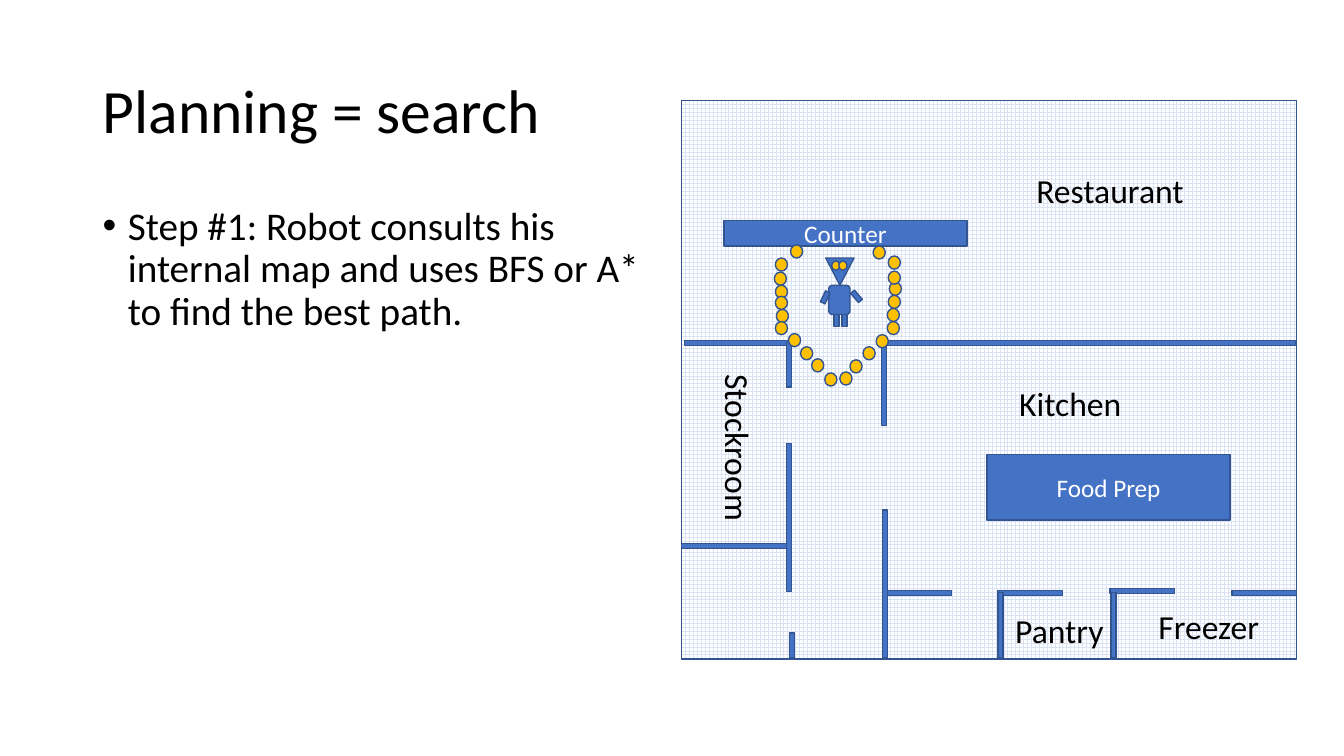
"""Build the slide on planning as search, with a restaurant floor plan and a robot."""
from lxml import etree
from pptx import Presentation
from pptx.dml.color import RGBColor
from pptx.enum.dml import MSO_PATTERN
from pptx.enum.shapes import MSO_SHAPE
from pptx.enum.text import MSO_ANCHOR, MSO_AUTO_SIZE, PP_ALIGN
from pptx.oxml.ns import qn
from pptx.util import Inches, Pt

RECTANGLE = MSO_SHAPE.RECTANGLE
ROUNDED = MSO_SHAPE.ROUNDED_RECTANGLE
TRIANGLE = MSO_SHAPE.ISOSCELES_TRIANGLE
OVAL = MSO_SHAPE.OVAL
LARGE_GRID = MSO_PATTERN.LARGE_GRID
TOP, MIDDLE = MSO_ANCHOR.TOP, MSO_ANCHOR.MIDDLE
CENTER = PP_ALIGN.CENTER
FIT_SHAPE = MSO_AUTO_SIZE.SHAPE_TO_FIT_TEXT

WALL = 0.05
LEVEL_WALLS = [(6.79, 3.38, 1.06), (8.73, 3.38, 4.12), (6.76, 5.39, 1.04),
               (8.8, 5.86, 0.64), (9.9, 5.86, 0.64), (11.01, 5.84, 0.64),
               (12.22, 5.86, 0.64)]
UPRIGHT_WALLS = [(8.74, 3.4, 0.82), (8.75, 5.06, 1.47), (9.9, 5.88, 0.65),
                 (11.02, 5.88, 0.65), (7.8, 4.4, 1.47), (7.8, 3.4, 0.44),
                 (7.83, 6.28, 0.25)]
ROOMS = [("Kitchen", 10.01, 3.75, 1.23, 0), ("Restaurant", 10.18, 1.64, 1.68, 0),
         ("Freezer", 11.39, 5.96, 1.21, 0), ("Pantry", 9.97, 6, 1.09, 0),
         ("Stockroom", 6.49, 4.2, 1.67, 90)]
ROBOT_LIMBS = [(8.27, 3.12, 0), (8.35, 3.12, 0), (8.47, 2.88, 319.4), (8.16, 2.89, 24.9)]
DOTS = [(7.69, 2.56), (7.68, 2.7), (7.69, 2.83), (7.69, 2.94), (7.7, 3.07), (7.69, 3.19),
        (8.05, 3.56), (8.43, 3.57), (8.8, 3.19), (8.8, 3.06), (8.81, 2.93), (8.82, 2.8),
        (8.81, 2.69), (8.81, 2.54), (7.84, 2.43), (8.66, 2.44), (8.69, 3.32), (7.82, 3.31),
        (8.56, 3.44), (7.94, 3.44), (8.18, 3.7), (8.33, 3.69)]


def color(value):
    return RGBColor.from_string(value)


class FloorPlan:
    font = "Calibri"
    ink, paper = "000000", "FFFFFF"
    blue, edge, gold, grid = "4472C4", "325491", "FFC000", "DAE3F3"

    def __init__(self, page):
        self.page = page

    def label(self, box, words, size, ink, anchor):
        frame = box.text_frame
        frame.text = words
        frame.vertical_anchor = anchor
        para = frame.paragraphs[0]
        for span in para.runs:
            span.font.name = self.font
            span.font.size = Pt(size)
            span.font.color.rgb = color(ink)
        return para

    def text(self, words, left, top, width, height, size, anchor=TOP, wrap=True):
        box = self.page.shapes.add_textbox(
            Inches(left), Inches(top), Inches(width), Inches(height))
        box.text_frame.word_wrap = wrap
        return box, self.label(box, words, size, self.ink, anchor)

    def bullet(self, words, left, top, width, height, size):
        box, para = self.text(words, left, top, width, height, size)
        para.line_spacing = 0.9
        para.space_before = Pt(10)
        properties = para._p.get_or_add_pPr()
        properties.set("marL", str(Inches(0.25)))
        properties.set("indent", str(-Inches(0.25)))
        etree.SubElement(properties, qn("a:buFont")).set("typeface", "Arial")
        etree.SubElement(properties, qn("a:buChar")).set("char", "•")

    def room(self, name, left, top, width, turn):
        box, para = self.text(name, left, top, width, 0.5, 24, wrap=False)
        box.text_frame.auto_size = FIT_SHAPE
        box.rotation = turn

    def shape(self, kind, left, top, width, height, fill=blue, turn=0, group=None):
        shapes = (group or self.page).shapes
        item = shapes.add_shape(
            kind, Inches(left), Inches(top), Inches(width), Inches(height))
        item.shadow.inherit = False
        item.rotation = turn
        item.fill.solid()
        item.fill.fore_color.rgb = color(fill)
        item.line.color.rgb = color(self.edge)
        item.line.width = Pt(1)
        return item

    def floor(self, left, top, width, height):
        item = self.shape(RECTANGLE, left, top, width, height)
        item.fill.patterned()
        item.fill.pattern = LARGE_GRID
        item.fill.fore_color.rgb = color(self.grid)
        item.fill.back_color.rgb = color(self.paper)

    def furniture(self, name, left, top, width, height):
        item = self.shape(RECTANGLE, left, top, width, height)
        self.label(item, name, 18, self.paper, MIDDLE).alignment = CENTER

    def robot(self):
        group = self.page.shapes.add_group_shape()
        self.shape(TRIANGLE, 8.19, 2.56, 0.28, 0.27, turn=180, group=group)
        for left in (8.25, 8.32):
            self.shape(OVAL, left, 2.59, 0.08, 0.09, self.gold, group=group)
        self.shape(ROUNDED, 8.22, 2.83, 0.21, 0.29, group=group)
        for left, top, turn in ROBOT_LIMBS:
            self.shape(RECTANGLE, left, top, 0.05, 0.12, turn=turn, group=group)


def main():
    deck = Presentation()
    deck.slide_width, deck.slide_height = Inches(13.33), Inches(7.5)
    plan = FloorPlan(deck.slides.add_slide(deck.slide_layouts[6]))

    title, heading = plan.text("Planning = search", 0.92, 0.4, 5.04, 1.45, 44, MIDDLE)
    heading.line_spacing = 0.9
    plan.bullet("Step #1: Robot consults his internal map and uses BFS or A* "
                "to find the best path.", 0.92, 2, 5.67, 4.76, 28)

    plan.floor(6.76, 1, 6.1, 5.54)
    plan.robot()
    plan.furniture("Counter", 7.18, 2.19, 2.41, 0.25)
    plan.furniture("Food Prep", 9.79, 4.51, 2.41, 0.65)
    for left, top, length in LEVEL_WALLS:
        plan.shape(RECTANGLE, left, top, length, WALL)
    for left, top, length in UPRIGHT_WALLS:
        plan.shape(RECTANGLE, left, top, WALL, length)
    for room in ROOMS:
        plan.room(*room)
    for left, top in DOTS:
        plan.shape(OVAL, left, top, 0.12, 0.13, plan.gold)

    deck.save("out.pptx")


if __name__ == "__main__":
    main()
